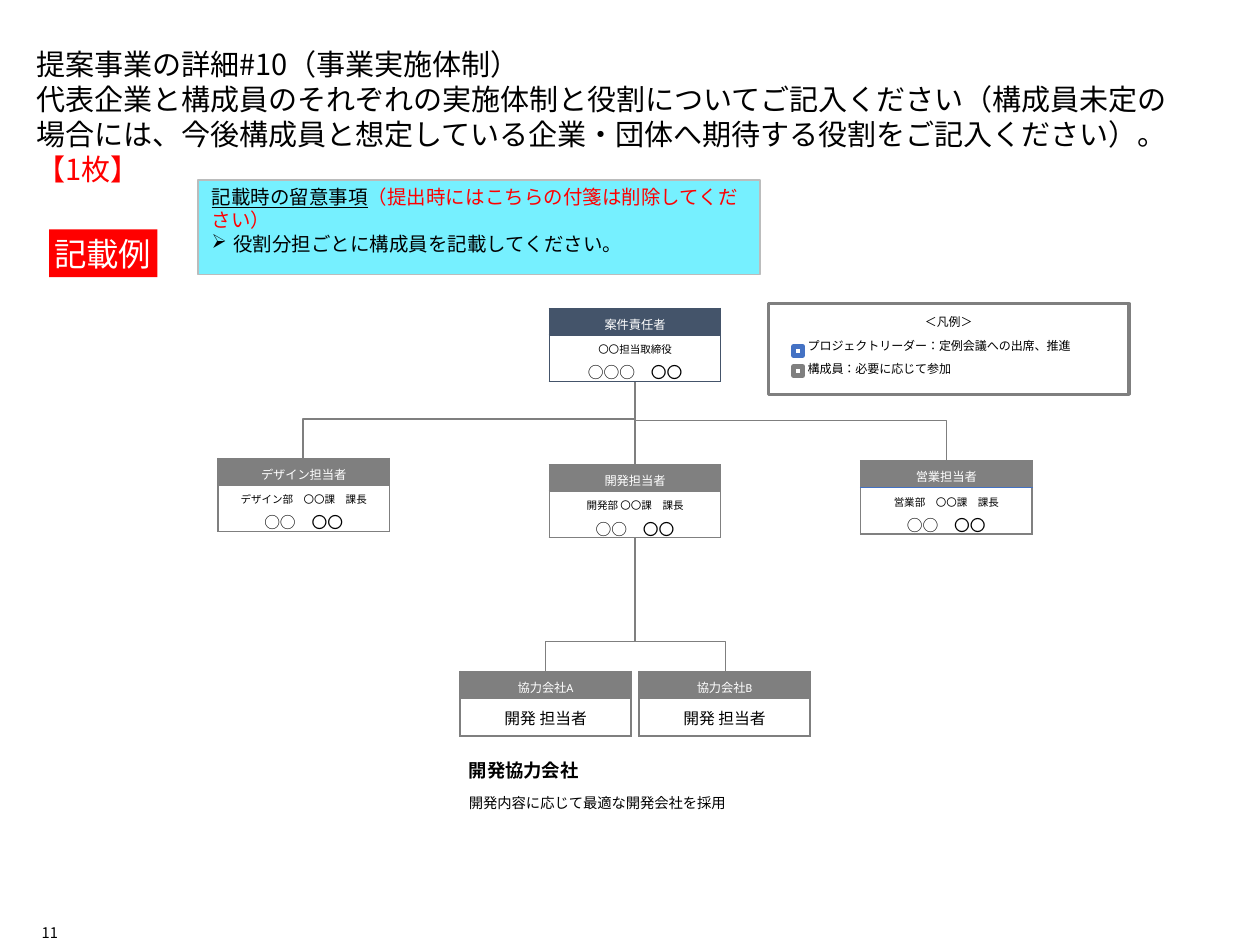
from lxml import etree
from pptx import Presentation
from pptx.dml.color import RGBColor
from pptx.enum import lang, shapes, text
from pptx.oxml import ns
from pptx.util import Inches, Pt


class Theme:
    font, latin, marks = "Noto Sans CJK JP", "Calibri", "Wingdings"
    black, white, red = "000000", "FFFFFF", "FF0000"
    navy, gray, mid, blue = "44546A", "7F7F7F", "808080", "4472C4"
    cyan, pale = "76F0FF", "BBBCBC"
    title, badge, note, team, memo = 16.6, 18.5, 11.1, 10.5, 8.2
    head, post, name, key, item, page = 7, 6, 9, 6.8, 6.9, 8.4


def write(frame, paras, size=9, color=Theme.black, font=Theme.font, align="LEFT",
          anchor="TOP", pad=(0.04, 0.04, 0.04, 0.04), lead=1.0, gap=0):
    if hasattr(frame, "word_wrap"):
        frame.word_wrap = True
    body = frame.text_frame if hasattr(frame, "text_frame") else frame
    frame.vertical_anchor = text.MSO_ANCHOR[anchor]
    frame.margin_left, frame.margin_top, frame.margin_right, frame.margin_bottom = map(Inches, pad)
    for i, runs in enumerate(paras):
        para = body.paragraphs[0] if i == 0 else body.add_paragraph()
        para.alignment = text.PP_ALIGN[align]
        para.line_spacing = lead
        para.space_before = Pt(gap if i else 0)
        for words, look in runs:
            if words == "\n":
                para.add_line_break()
                continue
            run = para.add_run()
            run.text = words
            run.font.size = Pt(look.get("size", size))
            run.font.bold = look.get("bold", False)
            run.font.underline = look.get("under", False)
            run.font.language_id = lang.MSO_LANGUAGE_ID.JAPANESE
            run.font.name = font
            run.font.color.rgb = RGBColor.from_string(look.get("color", color))
            etree.SubElement(run.font._element, ns.qn("a:ea")).set("typeface", Theme.font)


def block(kind, box, fill, line=None, width=1):
    shape = slide.shapes.add_shape(shapes.MSO_SHAPE[kind], *map(Inches, box))
    shape.shadow.inherit = False
    shape.fill.solid()
    shape.fill.fore_color.rgb = RGBColor.from_string(fill)
    if line:
        shape.line.color.rgb = RGBColor.from_string(line)
        shape.line.width = Pt(width)
    else:
        shape.line.fill.background()
    return shape


deck = Presentation()
deck.slide_width, deck.slide_height = Inches(10), Inches(7.5)
slide = deck.slides.add_slide(deck.slide_layouts[6])

title = slide.shapes.add_textbox(Inches(0.25), Inches(0.47), Inches(9.11), Inches(0.91))
write(title.text_frame, [[
    ("提案事業の詳細#10（事業実施体制）", {}), ("\n", {}),
    ("代表企業と構成員のそれぞれの実施体制と役割についてご記入ください（構成員未定の場合には、"
     "今後構成員と想定している企業・団体へ期待する役割をご記入ください）。", {}),
    ("【1枚】", {"color": Theme.red})]], size=Theme.title, anchor="MIDDLE")

group = block("ROUNDED_RECTANGLE", (3.6, 5.17, 2.88, 1.35), Theme.white)
group.adjustments[0] = 0.08
write(group.text_frame, [
    [("開発協力会社", {"size": Theme.team, "bold": True})],
    [("開発内容に応じて最適な開発会社を採用", {"size": Theme.memo})]],
    anchor="BOTTOM", pad=(0.09, 0.05, 0.09, 0.05), lead=1.3, gap=4.5)

elbows = [
    ((3.41, 2.01, 0.62, 2.63), 90, None, 0.5),
    ((5.96, 2.1, 0.64, 2.47), 270, "flipH", 0.5),
    ((5.04, 4.62, 0.01, 1.43), 270, "flipV", 25),
]
links = []
for (x, y, w, h), turn, flip, bend in elbows:
    link = slide.shapes.add_connector(
        shapes.MSO_CONNECTOR.ELBOW, *map(Inches, (x, y, x + w, y + h)))
    frame = link._element.spPr.find(ns.qn("a:xfrm"))
    frame.set("rot", str(turn * 60000))
    if flip:
        frame.set(flip, "1")
    shape = link._element.spPr.find(ns.qn("a:prstGeom"))
    guides = shape.find(ns.qn("a:avLst"))
    if guides is None:
        guides = etree.SubElement(shape, ns.qn("a:avLst"))
    guide = etree.SubElement(guides, ns.qn("a:gd"))
    guide.set("name", "adj1")
    guide.set("fmla", f"val {int(bend * 100000)}")
    links.append(link)
for top, end in [(3.02, 3.69), (4.26, 5.09)]:
    links.append(slide.shapes.add_connector(
        shapes.MSO_CONNECTOR.STRAIGHT, *map(Inches, (5.04, top, 5.04, end))))
for link in links:
    link.line.color.rgb = RGBColor.from_string(Theme.gray)
    link.line.width = Pt(0.75)
    etree.SubElement(link._element.spPr, ns.qn("a:effectLst"))

tall, short = (0.2, 0.36), (0.21, 0.3)
cards = [
    (4.36, 2.45, tall, Theme.navy, Theme.navy, "案件責任者", "〇〇担当取締役", "○○○　〇〇"),
    (1.73, 3.64, tall, Theme.gray, Theme.gray, "デザイン担当者", "デザイン部　〇〇課　課長", "○○　〇〇"),
    (4.36, 3.69, tall, Theme.mid, Theme.mid, "開発担当者", "開発部 〇〇課　課長", "○○　〇〇"),
    (6.83, 3.66, tall, Theme.mid, Theme.blue, "営業担当者", "営業部　〇〇課　課長", "○○　〇〇"),
    (3.65, 5.33, short, Theme.gray, Theme.gray, "協力会社A", None, "開発 担当者"),
    (5.07, 5.33, short, Theme.gray, Theme.gray, "協力会社B", None, "開発 担当者"),
]
for x, y, rows, tone, rule, role, post, name in cards:
    table = slide.shapes.add_table(
        2, 1, *map(Inches, (x, y, 1.36, sum(rows)))).table
    table.columns[0].width = Inches(1.36)
    lines = [[(post, {"size": Theme.post})]] if post else []
    lines.append([(name, {"size": Theme.name})])
    parts = [
        ([[(role, {"size": Theme.head, "color": Theme.white})]], tone, "lnB"),
        (lines, Theme.white, "lnT"),
    ]
    for i, (paras, fill, inner) in enumerate(parts):
        table.rows[i].height = Inches(rows[i])
        cell = table.cell(i, 0)
        write(cell, paras, font=Theme.font if post else Theme.latin, align="CENTER",
              anchor="MIDDLE", pad=(0.08, 0.04, 0.08, 0.04), lead=1.1, gap=1)
        cell.fill.solid()
        cell.fill.fore_color.rgb = RGBColor.from_string(fill)
        props = cell._tc.get_or_add_tcPr()
        for k, side in enumerate(("lnL", "lnR", "lnT", "lnB")):
            edge = etree.Element(ns.qn("a:" + side), w=str(Pt(1)))
            paint = etree.SubElement(edge, ns.qn("a:solidFill"))
            etree.SubElement(paint, ns.qn("a:srgbClr")).set("val", rule if side == inner else tone)
            props.insert(k, edge)

badge = block("RECTANGLE", (0.39, 1.82, 0.86, 0.38), Theme.red)
write(badge.text_frame, [[("記載例", {})]], size=Theme.badge, color=Theme.white, anchor="MIDDLE")

note = block("RECTANGLE", (1.57, 1.43, 4.46, 0.75), Theme.cyan, Theme.pale)
write(note.text_frame, [
    [("記載時の留意事項", {"under": True}),
     ("（提出時にはこちらの付箋は削除してください）", {"color": Theme.red})],
    [("役割分担ごとに構成員を記載してください。", {})]],
    size=Theme.note, pad=(0.11, 0.04, 0.04, 0.04))
props = note.text_frame.paragraphs[1]._p.get_or_add_pPr()
props.set("marL", str(Inches(0.17)))
props.set("indent", str(-Inches(0.17)))
face = etree.SubElement(props, ns.qn("a:buFont"))
face.set("typeface", Theme.marks)
face.set("charset", "2")
etree.SubElement(props, ns.qn("a:buChar")).set("char", "Ø")

legend = block("RECTANGLE", (6.1, 2.41, 2.86, 0.72), Theme.white, Theme.gray, 2)
write(legend.text_frame, [[("＜凡例＞", {})]], size=Theme.key, align="CENTER",
      pad=(0.09, 0.05, 0.09, 0.05), lead=1.3)
items = [
    (2.75, 2.63, Theme.blue, "プロジェクトリーダー：定例会議への出席、推進"),
    (2.91, 2.81, Theme.gray, "構成員：必要に応じて参加"),
]
for mark, top, tone, words in items:
    block("RECTANGLE", (6.3, mark, 0.07, 0.07), Theme.white, tone, 3)
    label = slide.shapes.add_textbox(*map(Inches, (6.32, top, 3.3, 0.3)))
    write(label.text_frame, [[(words, {})]], size=Theme.item, pad=(0.09,) * 4)

page = slide.shapes.add_textbox(*map(Inches, (0.28, 7.29, 0.18, 0.18)))
write(page.text_frame, [[("11", {})]], size=Theme.page, align="RIGHT", anchor="BOTTOM", pad=(0,) * 4)

deck.save("out.pptx")
